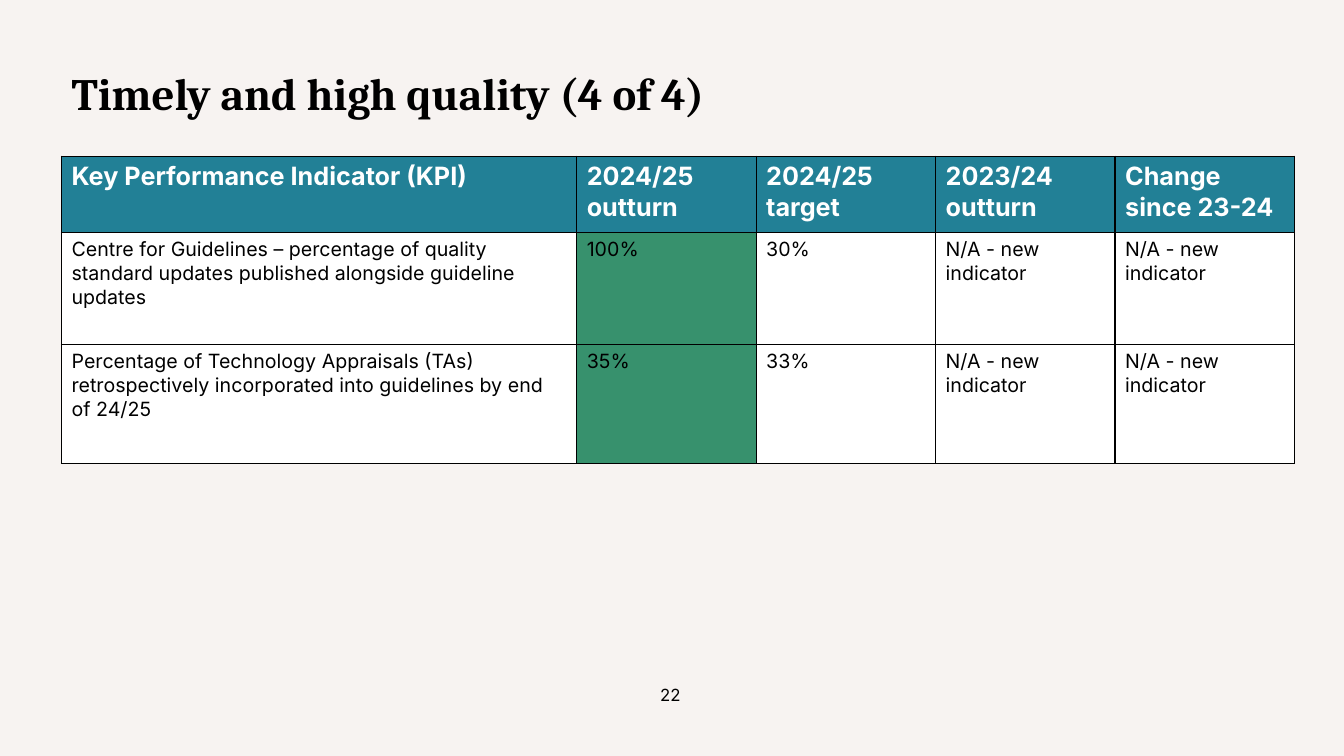
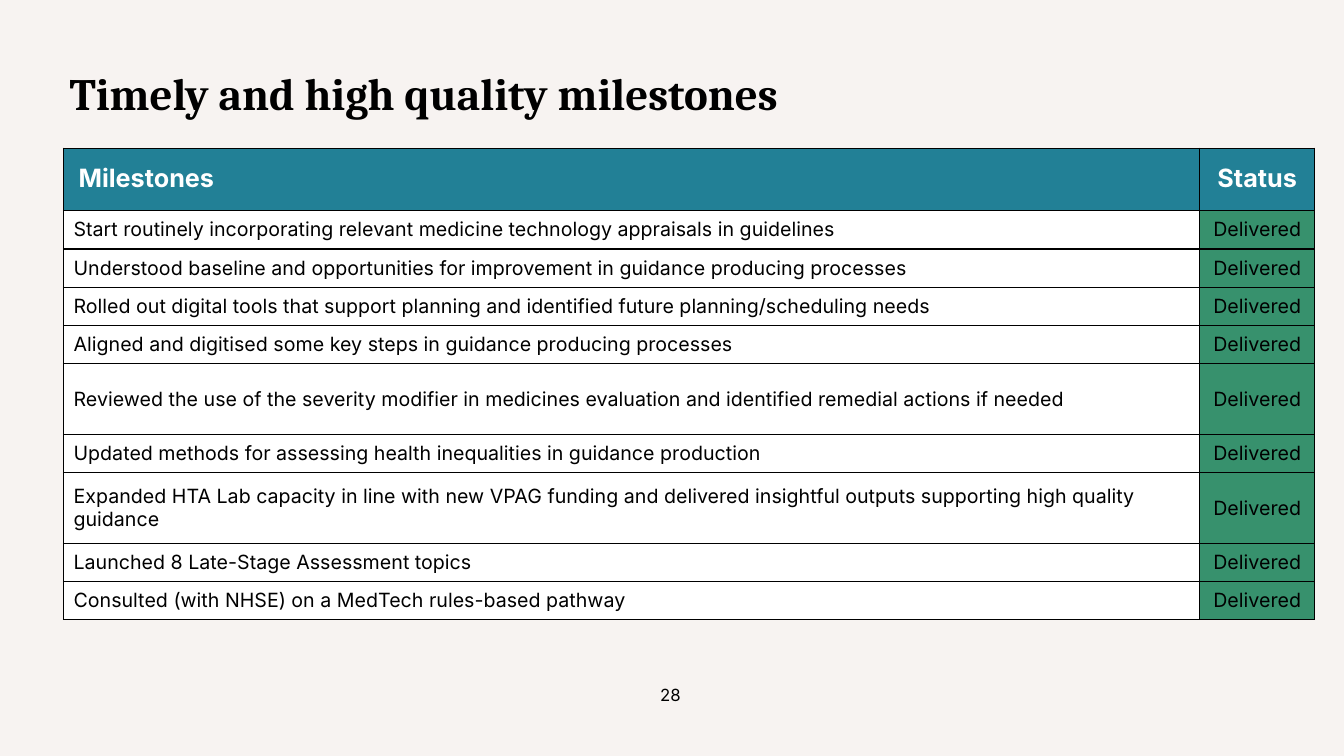
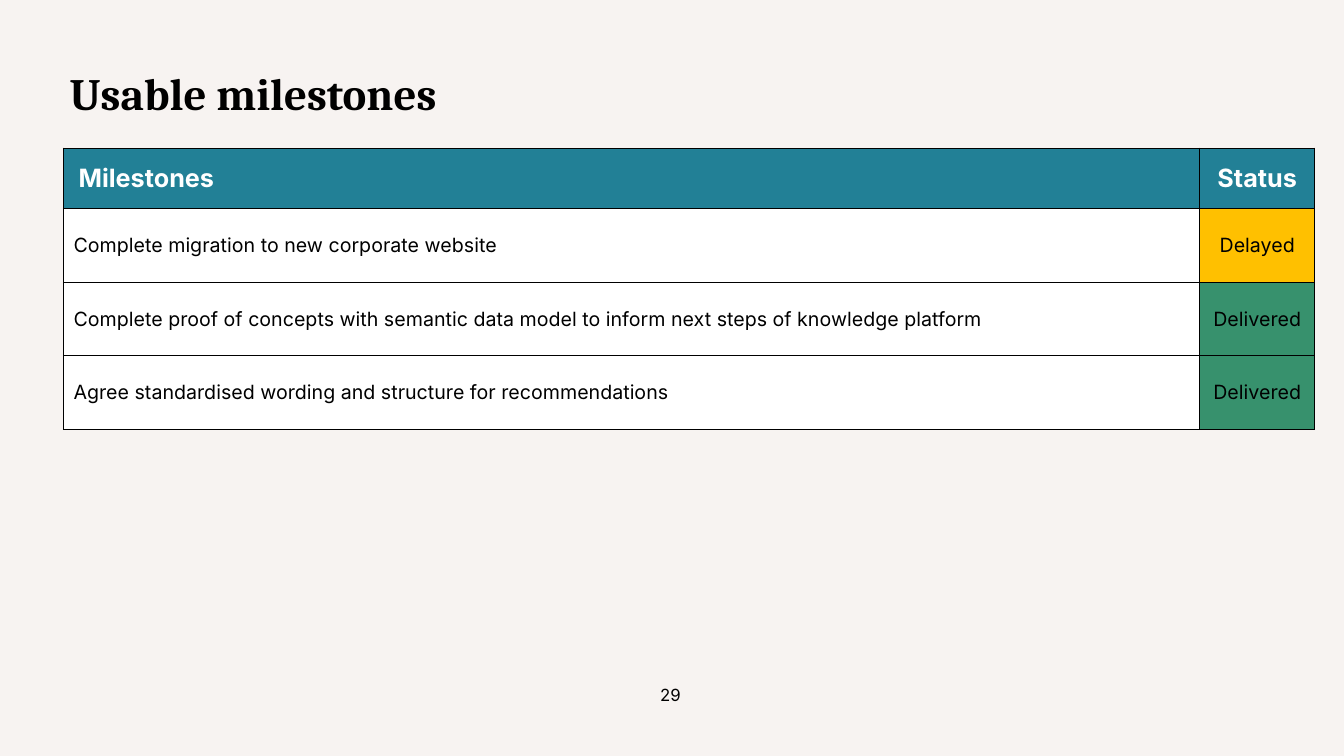
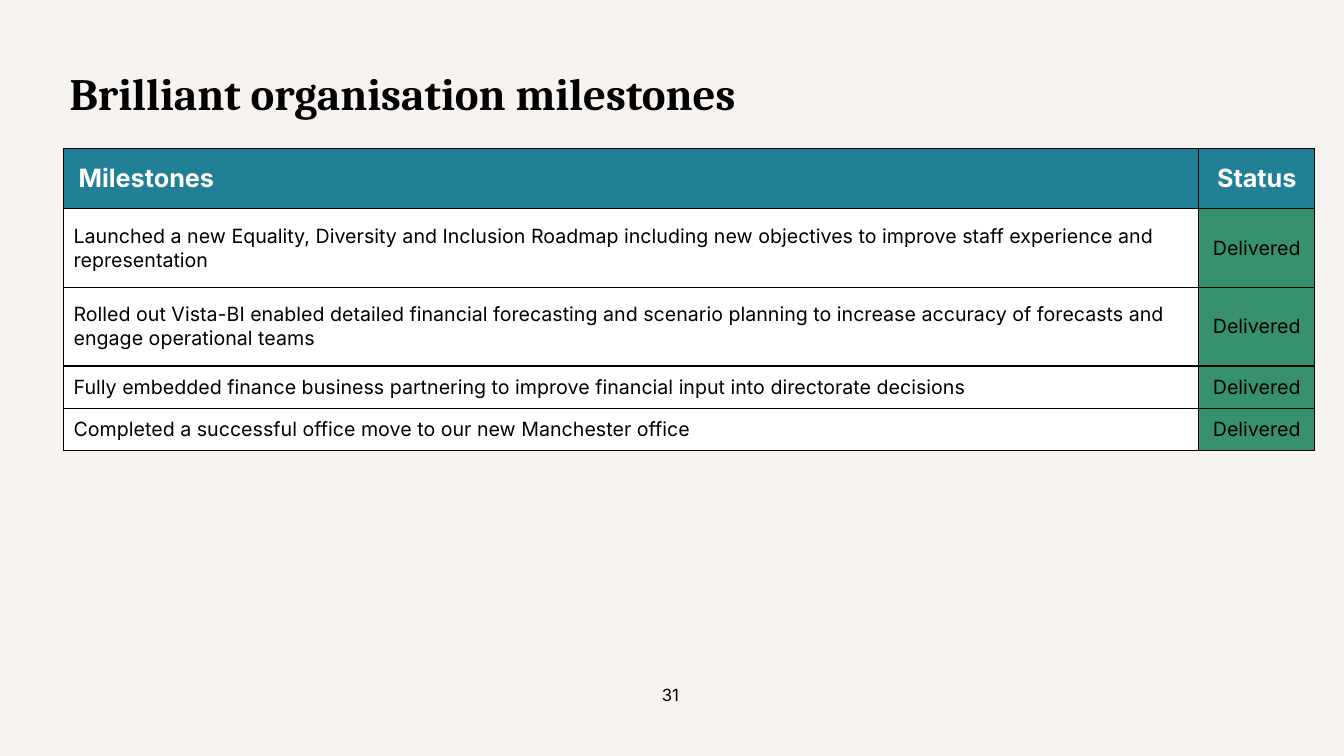
from dataclasses import dataclass

from lxml.etree import SubElement
from pptx import Presentation
from pptx.dml.color import RGBColor
from pptx.enum.text import MSO_ANCHOR, MSO_AUTO_SIZE, PP_ALIGN
from pptx.oxml.ns import qn
from pptx.util import Inches, Pt


@dataclass(frozen=True)
class Theme:
    paper: RGBColor = RGBColor(0xF7, 0xF3, 0xF1)
    ink: RGBColor = RGBColor(0x00, 0x00, 0x00)
    white: RGBColor = RGBColor(0xFF, 0xFF, 0xFF)
    teal: RGBColor = RGBColor(0x22, 0x80, 0x96)
    green: RGBColor = RGBColor(0x37, 0x91, 0x6D)
    amber: RGBColor = RGBColor(0xFF, 0xC0, 0x00)
    title_font: str = "Cambria"
    body_font: str = "Inter"
    title_size: Pt = Pt(32)
    header_size: Pt = Pt(18)
    body_size: Pt = Pt(14)
    number_size: Pt = Pt(12)
    border: Pt = Pt(1)


class Deck:
    """Holds the theme and the slide being built."""

    def __init__(self, theme):
        self.theme = theme
        self.prs = Presentation()
        self.prs.slide_width = Inches(13.33)
        self.prs.slide_height = Inches(7.5)
        self.set_fill(self.prs.slide_master.background.fill, theme.paper)
        self.title_only = self.prs.slide_layouts.get_by_name("Title Only")
        self.slide = None

    @staticmethod
    def set_fill(fill, color):
        fill.solid()
        fill.fore_color.rgb = color

    def set_text(self, frame, text, size, color, bold=False, align=PP_ALIGN.LEFT, font=None):
        frame.text = text
        paragraph = frame.paragraphs[0]
        paragraph.alignment = align
        paragraph.font.name = font or self.theme.body_font
        paragraph.font.size = size
        paragraph.font.bold = bold
        paragraph.font.color.rgb = color

    def add_slide(self, title, number, title_left=0.59):
        self.slide = self.prs.slides.add_slide(self.title_only)
        self.add_title(title, title_left)
        self.add_number(number)

    def add_title(self, text, left):
        title = self.slide.shapes.title
        title.left, title.top = Inches(left), Inches(0.6)
        title.width, title.height = Inches(12.11), Inches(0.95)
        frame = title.text_frame
        frame.auto_size = MSO_AUTO_SIZE.NONE
        frame.vertical_anchor = MSO_ANCHOR.TOP
        self.set_text(frame, text, self.theme.title_size, self.theme.ink, bold=True,
                      font=self.theme.title_font)

    def add_number(self, number):
        box = self.slide.shapes.add_textbox(Inches(5.15), Inches(6.74), Inches(3), Inches(0.4))
        box.text_frame.word_wrap = True
        self.set_text(box.text_frame, str(number), self.theme.number_size, self.theme.ink,
                      align=PP_ALIGN.CENTER)

    def add_table(self, left, top, widths, heights):
        table = self.slide.shapes.add_table(
            len(heights), len(widths), Inches(left), Inches(top),
            Inches(sum(widths)), Inches(sum(heights))).table
        table.horz_banding = False
        for column, width in zip(table.columns, widths):
            column.width = Inches(width)
        for row, height in zip(table.rows, heights):
            row.height = Inches(height)
        return table

    def add_borders(self, cell):
        properties = cell._tc.get_or_add_tcPr()
        for side in ("a:lnL", "a:lnR", "a:lnT", "a:lnB"):
            line = SubElement(properties, qn(side), w=str(self.theme.border))
            color = SubElement(SubElement(line, qn("a:solidFill")), qn("a:srgbClr"))
            color.set("val", str(self.theme.ink))

    def fill_cell(self, cell, text, fill, header=False, align=PP_ALIGN.LEFT, insets=None):
        """Style one cell; insets are (horizontal, vertical) inches."""
        theme = self.theme
        self.add_borders(cell)
        self.set_fill(cell.fill, fill)
        if insets:
            cell.margin_left = cell.margin_right = Inches(insets[0])
            cell.margin_top = cell.margin_bottom = Inches(insets[1])
        self.set_text(cell.text_frame, text,
                      theme.header_size if header else theme.body_size,
                      theme.white if header else theme.ink, bold=header, align=align)

    def add_kpi_table(self, headings, indicators, heights):
        theme = self.theme
        table = self.add_table(0.61, 1.55, [5.11] + [1.78] * 4, heights)
        for r, values in enumerate([headings, *indicators]):
            for c, text in enumerate(values):
                outturn = theme.green if c == 1 else theme.white
                self.fill_cell(table.cell(r, c), text, theme.teal if r == 0 else outturn,
                               header=r == 0)

    def add_milestone_table(self, milestones, header_height=0.6, status_width=1.14):
        """Each milestone is (text, status, row height)."""
        theme = self.theme
        status_fills = {"Delivered": theme.green, "Delayed": theme.amber}
        table = self.add_table(0.63, 1.47, [12.41 - status_width, status_width],
                               [header_height] + [height for _, _, height in milestones])
        aligns = (PP_ALIGN.LEFT, PP_ALIGN.CENTER)
        for c, heading in enumerate(("Milestones", "Status")):
            self.fill_cell(table.cell(0, c), heading, theme.teal, header=True,
                           align=aligns[c], insets=(0.15, 0.15))
        for r, (milestone, status, _) in enumerate(milestones, start=1):
            fills = (theme.white, status_fills[status])
            for c, text in enumerate((milestone, status)):
                cell = table.cell(r, c)
                cell.vertical_anchor = MSO_ANCHOR.MIDDLE
                self.fill_cell(cell, text, fills[c], align=aligns[c], insets=(0.1, 0.02))


def main():
    deck = Deck(Theme())

    deck.add_slide("Timely and high quality (4 of 4)", 22, title_left=0.61)
    new_indicator = ["N/A - new indicator"] * 2
    deck.add_kpi_table(
        ["Key Performance Indicator (KPI)", "2024/25 outturn", "2024/25 target",
         "2023/24 outturn", "Change since 23-24"],
        [["Centre for Guidelines – percentage of quality standard updates published "
          "alongside guideline updates", "100%", "30%", *new_indicator],
         ["Percentage of Technology Appraisals (TAs) retrospectively incorporated into "
          "guidelines by end of 24/25", "35%", "33%", *new_indicator]],
        heights=[0.76, 1.11, 1.18])

    deck.add_slide("Timely and high quality milestones", 28)
    single, double = 0.38, 0.7
    deck.add_milestone_table([
        ("Start routinely incorporating relevant medicine technology appraisals in guidelines",
         "Delivered", single),
        ("Understood baseline and opportunities for improvement in guidance producing processes",
         "Delivered", single),
        ("Rolled out digital tools that support planning and identified future "
         "planning/scheduling needs", "Delivered", single),
        ("Aligned and digitised some key steps in guidance producing processes",
         "Delivered", single),
        ("Reviewed the use of the severity modifier in medicines evaluation and identified "
         "remedial actions if needed", "Delivered", double),
        ("Updated methods for assessing health inequalities in guidance production",
         "Delivered", single),
        ("Expanded HTA Lab capacity in line with new VPAG funding and delivered insightful "
         "outputs supporting high quality guidance", "Delivered", double),
        ("Launched 8 Late-Stage Assessment topics", "Delivered", single),
        ("Consulted (with NHSE) on a MedTech rules-based pathway", "Delivered", single),
    ], header_height=0.62)

    deck.add_slide("Usable milestones", 29)
    deck.add_milestone_table([
        ("Complete migration to new corporate website", "Delayed", 0.73),
        ("Complete proof of concepts with semantic data model to inform next steps of "
         "knowledge platform", "Delivered", 0.73),
        ("Agree standardised wording and structure for recommendations", "Delivered", 0.73),
    ])

    deck.add_slide("Brilliant organisation milestones", 31)
    deck.add_milestone_table([
        ("Launched a new Equality, Diversity and Inclusion Roadmap including new objectives "
         "to improve staff experience and representation", "Delivered", 0.78),
        ("Rolled out Vista-BI enabled detailed financial forecasting and scenario planning "
         "to increase accuracy of forecasts and engage operational teams", "Delivered", 0.78),
        ("Fully embedded finance business partnering to improve financial input into "
         "directorate decisions", "Delivered", 0.42),
        ("Completed a successful office move to our new Manchester office",
         "Delivered", 0.42),
    ], status_width=1.15)

    deck.prs.save("out.pptx")


if __name__ == "__main__":
    main()
